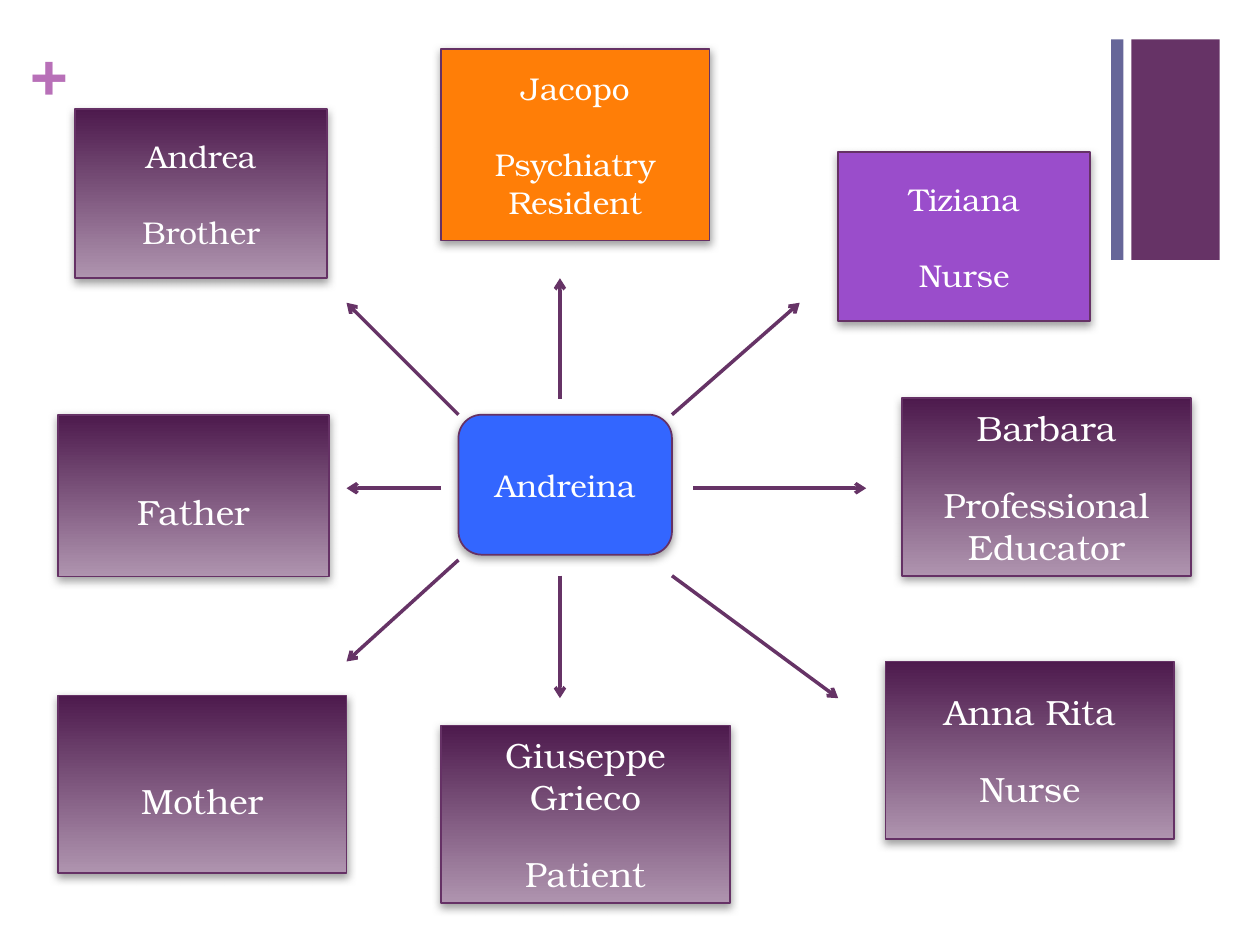
from lxml.etree import SubElement
from pptx import Presentation
from pptx.dml.color import RGBColor
from pptx.enum.shapes import MSO_CONNECTOR as Connector, MSO_SHAPE as Preset
from pptx.enum.text import MSO_ANCHOR as Anchor, PP_ALIGN as Align
from pptx.oxml.ns import qn
from pptx.util import Pt

FONT = "TeX Gyre Bonum"
PURPLE = "663366"
FADE = ("4D1A4D", "AF94AF")

PEOPLE = [
    ((262, 237, 122, 80), ["Andreina"], 18, "3366FF", 3.6),
    ((479, 87, 144, 96.5), ["Tiziana", "Nurse"], 18, "9A4DCB", 3.6),
    ((515.5, 227.5, 165, 101.5), ["Barbara", "Professional Educator"], 20, FADE, 3.6),
    ((506, 378, 165, 101.5), ["Anna Rita", "Nurse"], 20, FADE, 3.6),
    ((252, 28, 153.5, 109.5), ["Jacopo", "Psychiatry", "Resident"], 18, "FF7E07", 3.6),
    ((252, 414.5, 165, 101.5), ["Giuseppe Grieco", "Patient"], 20, FADE, 3.6),
    ((43, 62.5, 144, 96.5), ["Andrea", "Brother"], 18, FADE, 3.6),
    ((33, 237, 155, 92.5), ["Father"], 20, FADE, 22),
    ((33, 397.5, 165, 101.5), ["Mother"], 20, FADE, 22),
]

ARROWS = [
    ((384, 237), (457, 173)),
    ((396, 279), (495, 279)),
    ((384, 329), (479, 399)),
    ((320, 329), (320, 399)),
    ((320, 228), (320, 159)),
    ((262, 237), (198, 173)),
    ((252, 279), (198, 279)),
    ((262, 320), (198, 378)),
]


def color(value):
    return RGBColor.from_string(value)


def apply_format(target, values):
    for key, value in values.items():
        setattr(target, key, value)


def paint(fill, value):
    if isinstance(value, str):
        fill.solid()
        fill.fore_color.rgb = color(value)
        return
    fill.gradient()
    fill.gradient_angle = 270
    for stop, shade in zip(fill.gradient_stops, value):
        stop.color.rgb = color(shade)


def write_lines(frame, lines, size, ink, bold=False, gap=0, align=Align.CENTER):
    for index, line in enumerate(lines):
        paragraph = frame.paragraphs[0] if index == 0 else frame.add_paragraph()
        paragraph.alignment = align
        if index == 1:
            paragraph.space_before = Pt(gap)
        run = paragraph.add_run()
        run.text = line
        apply_format(run.font, {"name": FONT, "size": Pt(size), "bold": bold})
        run.font.color.rgb = color(ink)


def add_decoration(slide, box):
    left, top, width, height = box
    for offset, bar_width, shade in ((0, 7, "666699"), (11.5, width - 11.5, PURPLE)):
        bar = slide.shapes.add_shape(
            Preset.RECTANGLE, Pt(left + offset), Pt(top), Pt(bar_width), Pt(height))
        bar.shadow.inherit = False
        paint(bar.fill, shade)
        bar.line.fill.background()


def add_plus(slide, box):
    frame = slide.shapes.add_textbox(*map(Pt, box)).text_frame
    apply_format(frame, dict.fromkeys(
        ("margin_left", "margin_top", "margin_right", "margin_bottom"), 0))
    frame.word_wrap = True
    write_lines(frame, ["+"], 36, "B870B8", bold=True, align=Align.LEFT)


def add_person(slide, box, lines, size, fill, top_margin, preset=Preset.RECTANGLE):
    card = slide.shapes.add_shape(preset, *map(Pt, box))
    paint(card.fill, fill)
    card.line.width = Pt(1)
    card.line.color.rgb = color("653165")
    card.shadow.inherit = False
    effects = card._element.spPr.find(qn("a:effectLst"))
    shadow = SubElement(effects, qn("a:outerShdw"), blurRad=str(Pt(5)),
                        dist=str(Pt(2)), dir="5400000", rotWithShape="0")
    shade = SubElement(shadow, qn("a:srgbClr"), val="808080")
    SubElement(shade, qn("a:alpha"), val="75000")
    apply_format(card.text_frame, {
        "word_wrap": True,
        "vertical_anchor": Anchor.MIDDLE,
        "margin_top": Pt(top_margin),
    })
    gap = 21.7 if size == 18 else 20
    write_lines(card.text_frame, lines, size, "FFFFFF", gap=gap)


def add_arrow(slide, start, end):
    arrow = slide.shapes.add_connector(Connector.STRAIGHT, *map(Pt, start + end))
    arrow.line.width = Pt(2)
    arrow.line.color.rgb = color(PURPLE)
    properties = arrow._element.spPr
    SubElement(properties.find(qn("a:ln")), qn("a:tailEnd"), type="arrow")
    SubElement(properties, qn("a:effectLst"))


def main():
    deck = Presentation()
    apply_format(deck, {"slide_width": Pt(720), "slide_height": Pt(540)})
    slide = deck.slides.add_slide(deck.slide_layouts[6])
    add_decoration(slide, (635, 22.5, 62, 126))
    add_plus(slide, (17.5, 18, 21, 44))
    for start, end in ARROWS:
        add_arrow(slide, start, end)
    center, *others = PEOPLE
    add_person(slide, *center, preset=Preset.ROUNDED_RECTANGLE)
    for person in others:
        add_person(slide, *person)
    deck.save("out.pptx")


if __name__ == "__main__":
    main()
